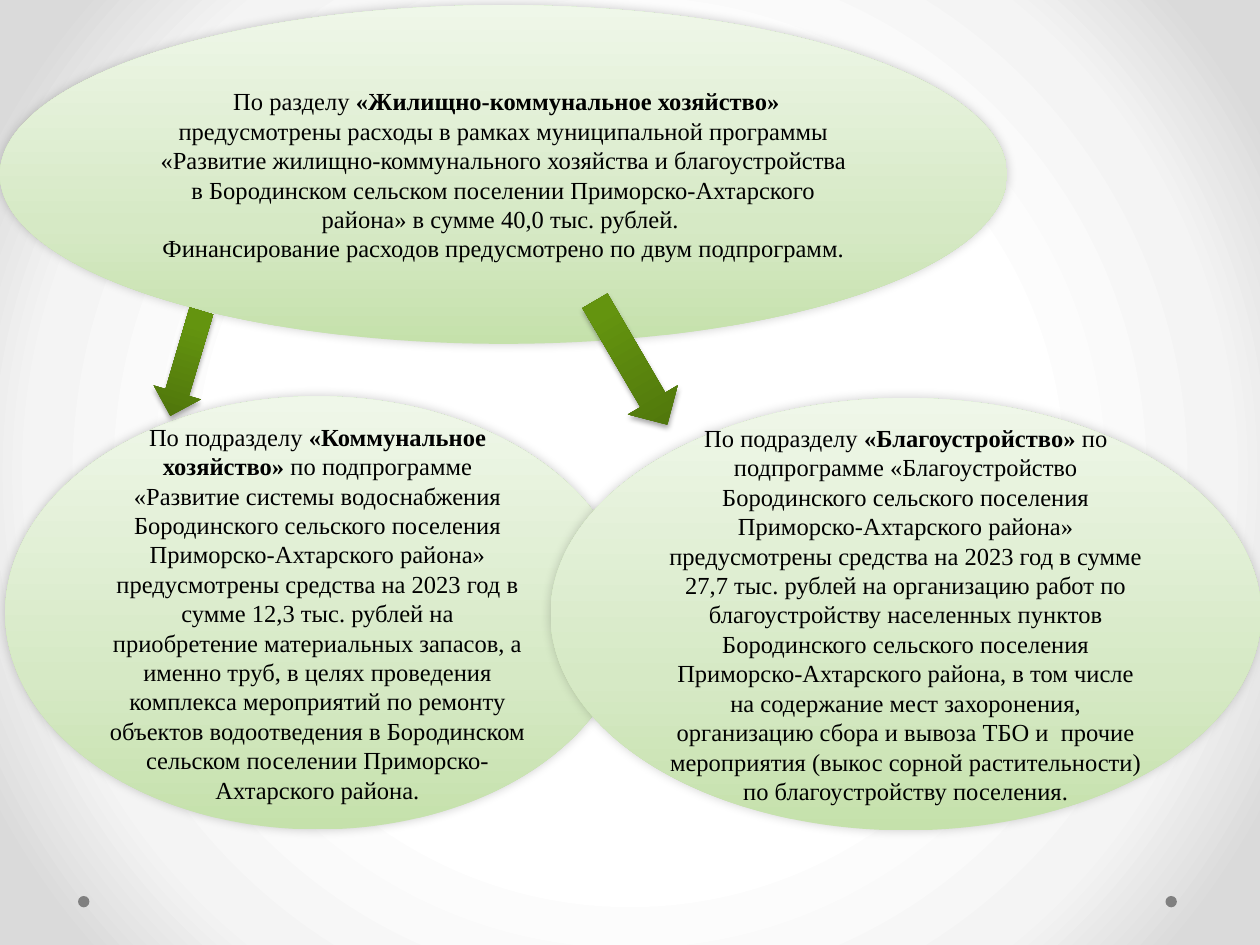
from lxml.etree import SubElement
from pptx import Presentation
from pptx.dml.color import RGBColor
from pptx.enum.shapes import MSO_SHAPE as Preset
from pptx.enum.text import MSO_ANCHOR as Anchor, PP_ALIGN as Align
from pptx.oxml.ns import qn
from pptx.util import Pt

FONT = "Times New Roman"
BACKDROP = [(50, "FFFFFF"), (76, "F4F4F4"), (92, "DADADA")]
PALE_GREEN = [(0, "C5E1AB"), (35, "D6E9C5"), (100, "EFF7E9")]
DARK_GREEN = [(0, "4D720B"), (80, "64940F"), (100, "65970C")]

# Each paragraph is a list of (text, bold) runs
SECTION = [
    [
        (" По разделу ", False),
        ("«Жилищно-коммунальное хозяйство» ", True),
        ("предусмотрены расходы в рамках муниципальной программы «Развитие "
         "жилищно-коммунального хозяйства и благоустройства в Бородинском "
         "сельском поселении Приморско-Ахтарского района» в сумме "
         "40,0 тыс. рублей. ", False),
    ],
    [("Финансирование расходов предусмотрено по двум подпрограмм.", False)],
]
UTILITIES = [[
    ("По подразделу ", False),
    ("«Коммунальное хозяйство»", True),
    (" по подпрограмме «Развитие системы водоснабжения Бородинского сельского "
     "поселения Приморско-Ахтарского района» предусмотрены средства на 2023 год "
     "в сумме 12,3 тыс. рублей на приобретение материальных запасов, а именно "
     "труб, в целях проведения комплекса мероприятий по ремонту объектов "
     "водоотведения в Бородинском сельском поселении Приморско-Ахтарского "
     "района.", False),
]]
IMPROVEMENT = [[
    ("По подразделу ", False),
    ("«Благоустройство»", True),
    (" по подпрограмме «Благоустройство Бородинского сельского поселения "
     "Приморско-Ахтарского района» предусмотрены средства на 2023 год в сумме "
     "27,7 тыс. рублей на организацию работ по благоустройству населенных "
     "пунктов Бородинского сельского поселения Приморско-Ахтарского района, в "
     "том числе на содержание мест захоронения, организацию сбора и вывоза ТБО "
     "и  прочие мероприятия (выкос сорной растительности) по благоустройству "
     "поселения.", False),
]]


def rgb(color):
    return RGBColor.from_string(color)


def add_color(parent, color, alpha=100):
    node = SubElement(parent, qn("a:srgbClr"), val=color)
    if alpha < 100:
        SubElement(node, qn("a:alpha"), val=str(alpha * 1000))


def set_gradient(owner, fill, stops, radial=False):
    """Fill with stops running upwards, or outwards from the centre."""
    fill.gradient()
    gradient = next(owner.element.iter(qn("a:gradFill")))
    for child in list(gradient):
        gradient.remove(child)
    stop_list = SubElement(gradient, qn("a:gsLst"))
    for position, color in stops:
        add_color(SubElement(stop_list, qn("a:gs"), pos=str(position * 1000)), color)
    if radial:
        circle = SubElement(gradient, qn("a:path"), path="circle")
        SubElement(circle, qn("a:fillToRect"),
                   {side: "50000" for side in "ltrb"})
    else:
        SubElement(gradient, qn("a:lin"), ang=str(270 * 60000), scaled="0")


def set_shadow(shape, alpha, blur, distance, angle):
    shape.shadow.inherit = False
    effects = next(shape.element.iter(qn("a:effectLst")))
    shadow = SubElement(effects, qn("a:outerShdw"), blurRad=str(Pt(blur)),
                        dist=str(Pt(distance)), dir=str(angle * 60000),
                        rotWithShape="0")
    add_color(shadow, "000000", alpha)


def add_plain(slide, preset, box):
    shape = slide.shapes.add_shape(preset, *map(Pt, box))
    shape.line.fill.background()
    shape.shadow.inherit = False
    return shape


def add_dot(slide, box):
    dot = add_plain(slide, Preset.OVAL, box)
    dot.fill.solid()
    dot.fill.fore_color.rgb = rgb("808080")


def add_bubble(slide, box, paragraphs):
    bubble = add_plain(slide, Preset.OVAL, box)
    set_gradient(bubble, bubble.fill, PALE_GREEN)
    set_shadow(bubble, alpha=20, blur=6, distance=0, angle=225)
    frame = bubble.text_frame
    frame.word_wrap = True
    frame.vertical_anchor = Anchor.MIDDLE
    for index, runs in enumerate(paragraphs):
        paragraph = frame.add_paragraph() if index else frame.paragraphs[0]
        paragraph.alignment = Align.CENTER
        paragraph.font.name = FONT
        paragraph.font.size = Pt(14)
        paragraph.font.color.rgb = rgb("000000")
        for text, bold in runs:
            run = paragraph.add_run()
            run.text = text
            run.font.bold = bold


def add_arrow(slide, box, rotation):
    arrow = add_plain(slide, Preset.DOWN_ARROW, box)
    arrow.rotation = rotation
    set_gradient(arrow, arrow.fill, DARK_GREEN)
    set_shadow(arrow, alpha=35, blur=3.1, distance=1.8, angle=90)


def build_budget_slide(slide):
    set_gradient(slide, slide.background.fill, BACKDROP, radial=True)
    for left in (666, 44.6):
        add_dot(slide, (left, 512, 6.5, 6.5))
    add_bubble(slide, (0, 3, 575.5, 193.5), SECTION)
    add_bubble(slide, (3, 226.5, 357, 247.5), UTILITIES)
    add_bubble(slide, (314.6, 227.5, 406, 247), IMPROVEMENT)
    add_arrow(slide, (92.2, 176.4, 28, 62.6), 16.5)
    add_arrow(slide, (344.2, 166.3, 33, 82), 329.7)


def main():
    deck = Presentation()
    deck.slide_width, deck.slide_height = Pt(720), Pt(540)
    build_budget_slide(deck.slides.add_slide(deck.slide_layouts[6]))
    deck.save("out.pptx")


if __name__ == "__main__":
    main()
